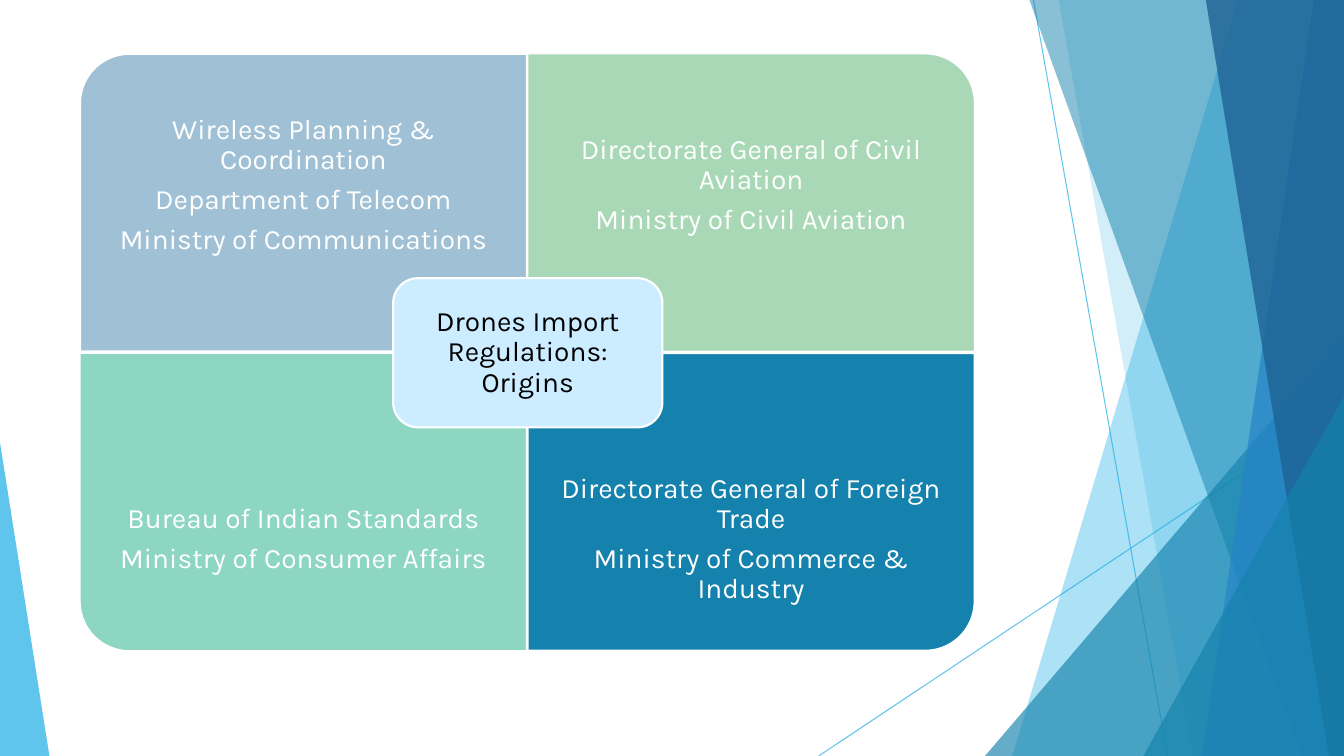
"""Build the slide on where drone import regulations originate."""
from dataclasses import dataclass

import pptx
import pptx.dml.color
import pptx.enum.shapes
import pptx.enum.text
import pptx.oxml.ns
import pptx.util
from lxml import etree

PX = 9144
SHAPE = pptx.enum.shapes.MSO_SHAPE


@dataclass(frozen=True)
class Theme:
    sky: str = "1CADE4"
    teal: str = "1482AC"
    blue: str = "2683C6"
    navy: str = "1D6294"
    steel: str = "A0C1D5"
    sage: str = "A9D8B7"
    mint: str = "8DD6C1"
    ice: str = "CCECFF"
    white: str = "FFFFFF"
    black: str = "000000"
    font: str = "Karla"
    size: float = 20
    space_after: float = 7
    line_spacing: float = 0.9
    hairline: float = 0.75
    border: float = 1.5
    turned_border: float = 2


@dataclass(frozen=True)
class Ray:
    start: tuple[int, int]
    end: tuple[int, int]


@dataclass(frozen=True)
class Facet:
    top_left: int
    top_right: int
    bottom_left: int
    color: str
    alpha: int


@dataclass(frozen=True)
class Wedge:
    left: int
    top: int
    width: int
    apex: float
    color: str
    alpha: int


@dataclass(frozen=True)
class Quadrant:
    col: int
    row: int
    rotation: int
    color: str
    drop: int
    lines: tuple[str, ...]


THEME = Theme()
SLIDE_W, SLIDE_H = 1333, 750
GRID_LEFT, GRID_TOP = 79, 53
QUAD_W, QUAD_H, TEXT_H = 444, 296, 222
ROW_PITCH = QUAD_H + 1
INSET, CENTER_INSET = 16, 15

RAYS = [Ray((1025, 0), (1158, 750)), Ray((1333, 403), (812, 750))]
DECOR = [
    Facet(1228, SLIDE_W, 1004, THEME.sky, 36),
    Facet(1050, SLIDE_W, 1183, THEME.sky, 20),
    Wedge(977, 333, 356, 1, THEME.teal, 66),
    Facet(1021, SLIDE_W, 1291, THEME.teal, 50),
    Facet(1303, SLIDE_W, 1192, THEME.blue, 70),
    Facet(1196, SLIDE_W, 1318, THEME.navy, 80),
    Wedge(1134, 393, 199, 1, THEME.teal, 66),
    Wedge(0, 439, 49, 0, THEME.sky, 70),
]
QUADRANTS = [
    Quadrant(0, 0, 270, THEME.steel, 40, (
        "Wireless Planning & Coordination",
        "Department of Telecom",
        "Ministry of Communications")),
    Quadrant(1, 0, 0, THEME.sage, 40, (
        "Directorate General of Civil Aviation",
        "Ministry of Civil Aviation")),
    Quadrant(0, 1, 180, THEME.mint, 0, (
        "Bureau of Indian Standards",
        "Ministry of Consumer Affairs")),
    Quadrant(1, 1, 90, THEME.teal, 0, (
        "Directorate General of Foreign Trade",
        "Ministry of Commerce & Industry")),
]


def emu(*lengths: int) -> list[int]:
    """Turn px lengths into EMU."""
    return [round(n * PX) for n in lengths]


def rgb(color: str) -> pptx.dml.color.RGBColor:
    """Return the colour object for a hex string."""
    return pptx.dml.color.RGBColor.from_string(color)


def set_alpha(sp, percent: int) -> None:
    """Give the single colour of a shape its opacity."""
    qn = pptx.oxml.ns.qn
    clr = next(sp.element.spPr.iter(qn("a:srgbClr")))
    etree.SubElement(clr, qn("a:alpha")).set("val", str(percent * 1000))


def paint(sp, color: str, border: float = 0) -> None:
    """Fill a shape and give it a white border or none."""
    sp.shadow.inherit = False
    sp.fill.solid()
    sp.fill.fore_color.rgb = rgb(color)
    if border:
        sp.line.color.rgb = rgb(THEME.white)
        sp.line.width = pptx.util.Pt(border)
    else:
        sp.line.fill.background()


def write(sp, lines: tuple[str, ...], color: str, inset: int, drop: int = 0) -> None:
    """Set centred paragraphs, lowered by an extra top inset."""
    tf = sp.text_frame
    tf.word_wrap = True
    tf.vertical_anchor = pptx.enum.text.MSO_ANCHOR.MIDDLE
    tf.margin_left, tf.margin_right, tf.margin_bottom, tf.margin_top = emu(
        inset, inset, inset, inset + drop)
    for i, line in enumerate(lines):
        p = tf.paragraphs[0] if i == 0 else tf.add_paragraph()
        p.text = line
        p.alignment = pptx.enum.text.PP_ALIGN.CENTER
        p.line_spacing = THEME.line_spacing
        p.space_after = pptx.util.Pt(THEME.space_after)
        p.font.name = THEME.font
        p.font.size = pptx.util.Pt(THEME.size)
        p.font.color.rgb = rgb(color)


def draw_ray(shapes, ray: Ray) -> None:
    """Draw one thin background line."""
    cxn = shapes.add_connector(
        pptx.enum.shapes.MSO_CONNECTOR.STRAIGHT, *emu(*ray.start, *ray.end))
    cxn.line.color.rgb = rgb(THEME.sky)
    cxn.line.width = pptx.util.Pt(THEME.hairline)
    set_alpha(cxn, 70)
    etree.SubElement(cxn.element.spPr, pptx.oxml.ns.qn("a:effectLst"))


def draw_decor(shapes, item: Facet | Wedge) -> None:
    """Draw one translucent background facet or wedge."""
    if isinstance(item, Facet):
        builder = shapes.build_freeform(item.top_left, 0, scale=PX)
        builder.add_line_segments([
            (item.top_right, 0), (SLIDE_W, SLIDE_H), (item.bottom_left, SLIDE_H)])
        sp = builder.convert_to_shape()
    else:
        sp = shapes.add_shape(SHAPE.ISOSCELES_TRIANGLE, *emu(
            item.left, item.top, item.width, SLIDE_H - item.top))
        sp.adjustments[0] = item.apex
    paint(sp, item.color)
    set_alpha(sp, item.alpha)


def draw_quadrant(shapes, quad: Quadrant) -> None:
    """Draw one quadrant with its outer corner rounded, and its text."""
    left = GRID_LEFT + quad.col * QUAD_W
    top = GRID_TOP + quad.row * ROW_PITCH
    turned = quad.rotation % 180 != 0
    w, h = (QUAD_H, QUAD_W) if turned else (QUAD_W, QUAD_H)
    sp = shapes.add_shape(SHAPE.ROUND_1_RECTANGLE, *emu(
        left + (QUAD_W - w) // 2, top + (QUAD_H - h) // 2, w, h))
    sp.rotation = quad.rotation
    paint(sp, quad.color, THEME.turned_border if turned else THEME.border)
    text_top = top + quad.row * (QUAD_H - TEXT_H)
    box = shapes.add_textbox(*emu(left, text_top, QUAD_W, TEXT_H))
    write(box, quad.lines, THEME.white, INSET, quad.drop)


def main() -> None:
    """Build and save the slide."""
    prs = pptx.Presentation()
    prs.slide_width, prs.slide_height = emu(SLIDE_W, SLIDE_H)
    shapes = prs.slides.add_slide(prs.slide_layouts[6]).shapes
    for ray in RAYS:
        draw_ray(shapes, ray)
    for item in DECOR:
        draw_decor(shapes, item)
    for quad in QUADRANTS:
        draw_quadrant(shapes, quad)
    center = shapes.add_shape(SHAPE.ROUNDED_RECTANGLE, *emu(390, 276, 267, 148))
    paint(center, THEME.ice, THEME.border)
    write(center, ("Drones Import Regulations: Origins",), THEME.black, CENTER_INSET)
    prs.save("out.pptx")


if __name__ == "__main__":
    main()
